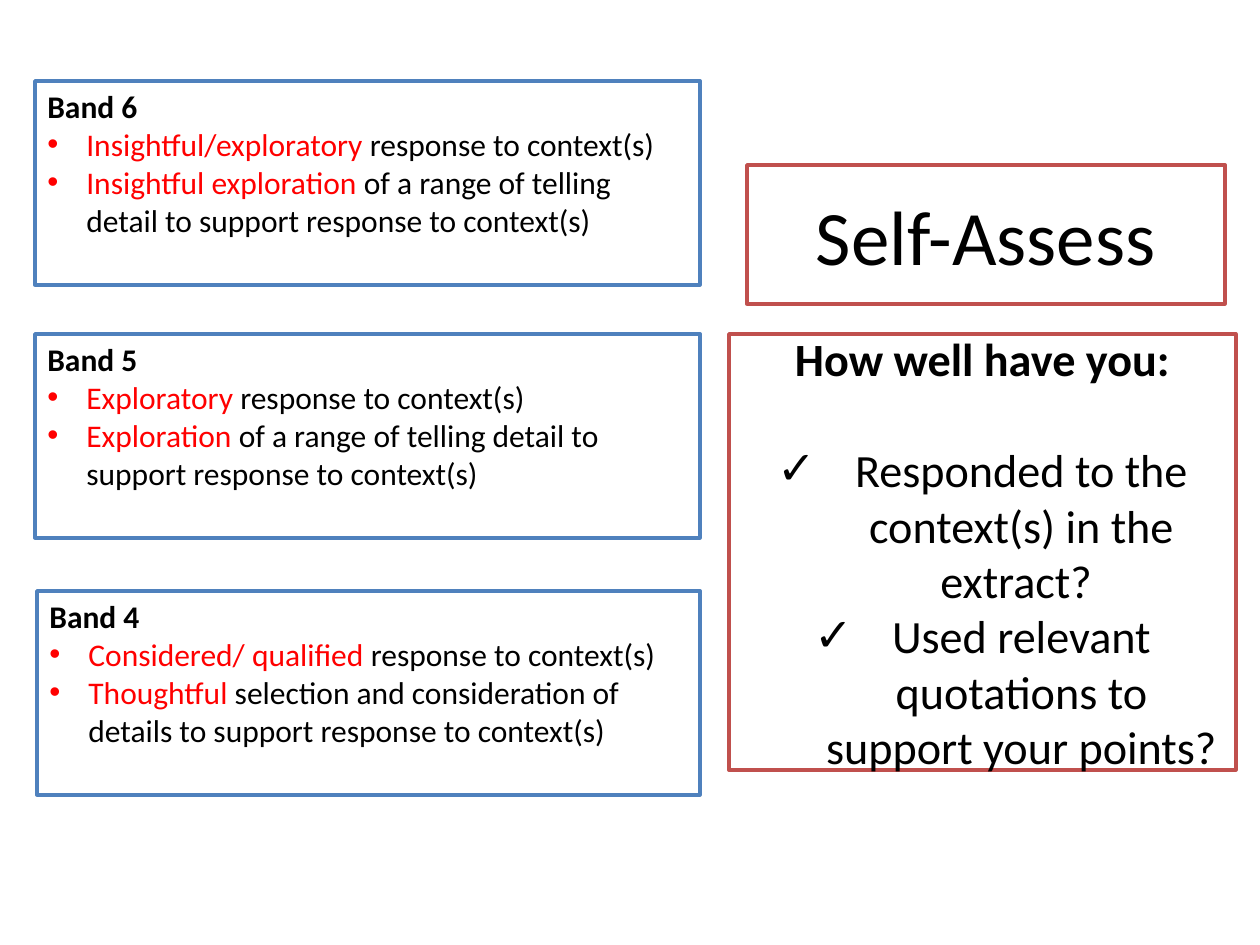
from lxml import etree
from pptx import Presentation
from pptx.dml.color import RGBColor
from pptx.enum.shapes import MSO_SHAPE
from pptx.enum.text import MSO_ANCHOR, PP_ALIGN
from pptx.oxml.ns import qn
from pptx.util import Pt

RECT = MSO_SHAPE.RECTANGLE
TOP, MIDDLE = MSO_ANCHOR.TOP, MSO_ANCHOR.MIDDLE
LEFT, CENTER = PP_ALIGN.LEFT, PP_ALIGN.CENTER

COLORS = {
    "white": "FFFFFF",
    "black": "000000",
    "red": "FF0000",
    "blue_line": "4F81BD",
    "red_line": "C0504D",
}
FONT = "Calibri"

BANDS = [
    ((35, 81, 665, 204), "Band 6", [
        ("Insightful/exploratory ", "response to context(s)"),
        ("Insightful exploration ",
         "of a range of telling detail to support response to context(s)"),
    ]),
    ((35, 334, 665, 204), "Band 5", [
        ("Exploratory ", "response to context(s)"),
        ("Exploration ",
         "of a range of telling detail to support response to context(s)"),
    ]),
    ((37, 591, 663, 204), "Band 4", [
        ("Considered/ qualified ", "response to context(s)"),
        ("Thoughtful ",
         "selection and consideration of details to support response to context(s)"),
    ]),
]
QUESTIONS = [
    "Responded to the context(s) in the extract? ",
    "Used relevant quotations to support your points?",
]


def px(n):
    return round(n * 914400 / 126)


def color(name):
    return RGBColor.from_string(COLORS[name])


def add_box(slide, box, line, anchor):
    sp = slide.shapes.add_shape(RECT, *map(px, box))
    sp.shadow.inherit = False
    sp.fill.solid()
    sp.fill.fore_color.rgb = color("white")
    sp.line.color.rgb = color(line)
    sp.line.width = Pt(2)
    tf = sp.text_frame
    tf.word_wrap = True
    tf.vertical_anchor = anchor
    return tf


def write(p, parts, size, align, bold=False):
    p.alignment = align
    for text, name in parts:
        r = p.add_run()
        r.text = text
        r.font.name = FONT
        r.font.size = Pt(size)
        r.font.bold = bold
        r.font.color.rgb = color(name)


def add_bullet(p, char, indent, font):
    pPr = p._p.get_or_add_pPr()
    pPr.set("marL", str(px(indent)))
    pPr.set("indent", str(-px(indent)))
    etree.SubElement(pPr, qn("a:buFont")).set("typeface", font)
    etree.SubElement(pPr, qn("a:buChar")).set("char", char)


def add_title(slide, box):
    tf = add_box(slide, box, "red_line", MIDDLE)
    write(tf.paragraphs[0], [("Self-Assess", "black")], 44, CENTER)


def add_band(slide, box, heading, criteria):
    tf = add_box(slide, box, "blue_line", TOP)
    write(tf.paragraphs[0], [(heading, "black")], 18, LEFT, bold=True)
    for key, rest in criteria:
        p = tf.add_paragraph()
        write(p, [(key, "red"), (rest, "black")], 18, LEFT)
        add_bullet(p, "•", 39, "Arial")


def add_checklist(slide, box, heading, questions):
    tf = add_box(slide, box, "red_line", MIDDLE)
    p = tf.paragraphs[0]
    write(p, [(heading, "black")], 26.4, CENTER, bold=True)
    p.space_after = Pt(32)
    for question in questions:
        p = tf.add_paragraph()
        write(p, [(question, "black")], 26.4, CENTER)
        add_bullet(p, "✓", 78, FONT)


def main():
    prs = Presentation()
    prs.slide_width, prs.slide_height = px(1260), px(945)
    slide = prs.slides.add_slide(prs.slide_layouts[6])
    add_title(slide, (747, 165, 478, 139))
    for box, heading, criteria in BANDS:
        add_band(slide, box, heading, criteria)
    add_checklist(slide, (729, 334, 507, 436), "How well have you:", QUESTIONS)
    prs.save("out.pptx")


if __name__ == "__main__":
    main()
